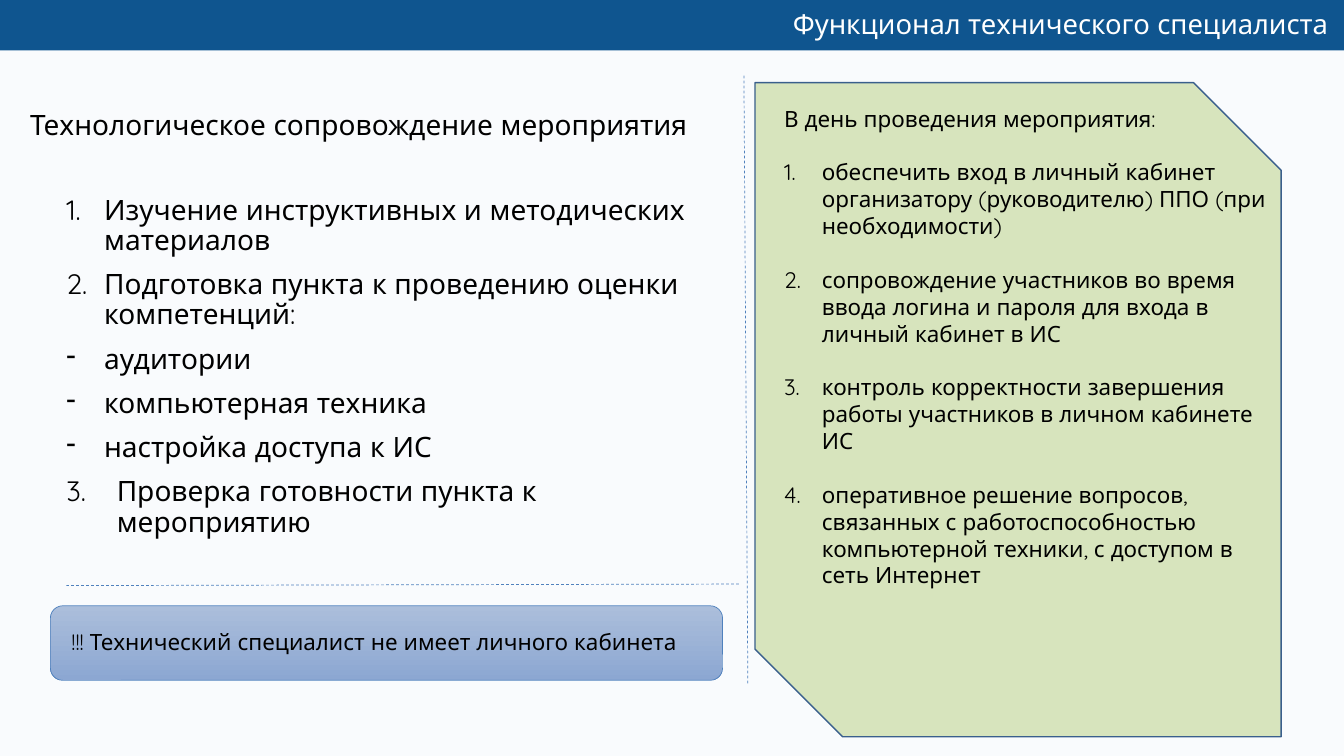
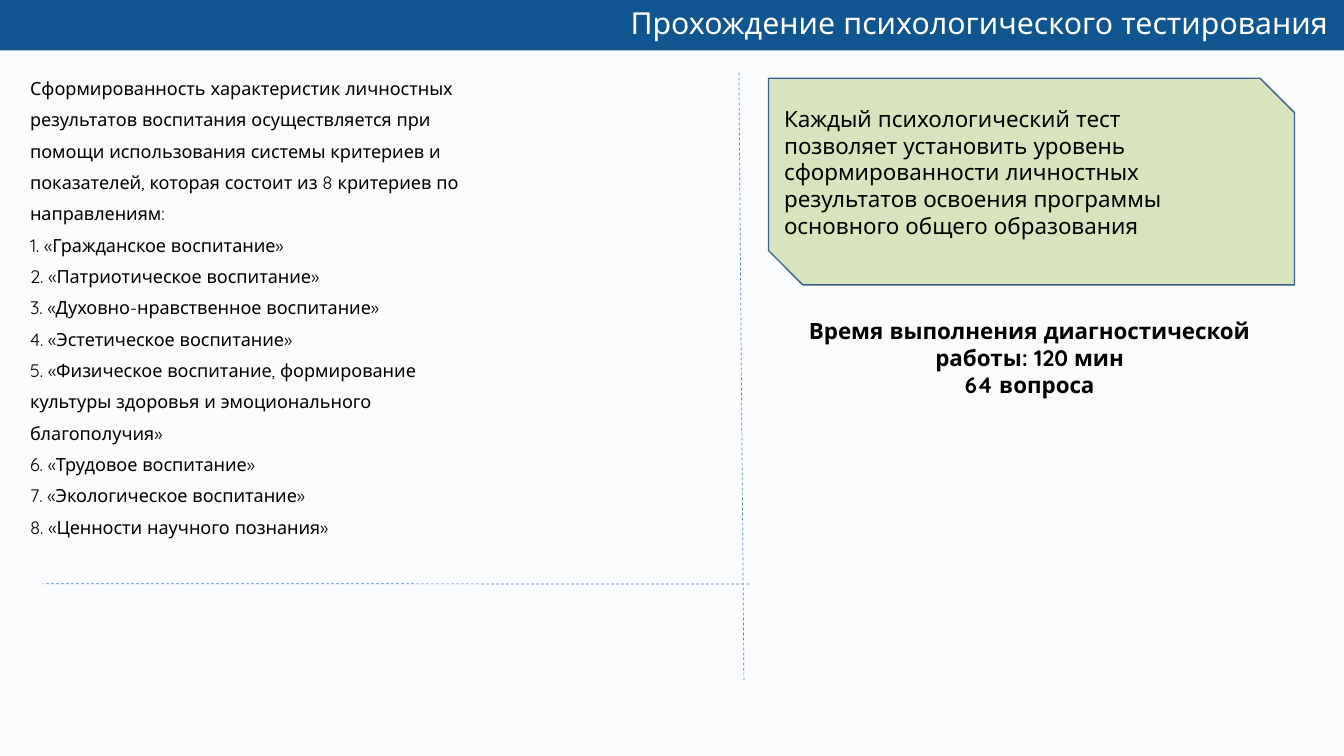
from lxml import etree
from pptx import Presentation
from pptx import util as u
from pptx.dml import color
from pptx.enum import dml, shapes, text
from pptx.oxml import ns

Pt = u.Pt
FONT = "Quicksand"
COLORS = {
    "paper": "F9FBFD",
    "band": "0F558F",
    "title": "FFFFFF",
    "ink": "000000",
    "card": "D7E4BD",
    "card_edge": "3A5F8C",
    "note_top": "ABBEDB",
    "note_bottom": "8CA7D2",
    "accent": "4F81BD",
}


def rgb(name):
    return color.RGBColor.from_string(COLORS[name])


class Slides:
    def __init__(self):
        self.deck = Presentation()
        self.deck.slide_width, self.deck.slide_height = Pt(960), Pt(540)
        background = self.deck.slide_master.background.fill
        background.solid()
        background.fore_color.rgb = rgb("paper")
        self.page = None

    def start_page(self, title, size):
        self.page = self.deck.slides.add_slide(self.deck.slide_layouts.get_by_name("Title Only"))
        band = self.shape(shapes.MSO_SHAPE.RECTANGLE, (0, 0, 960, 36), "band")
        holder = self.page.shapes.title
        holder.element.addprevious(band.element)
        holder.left, holder.top, holder.width, holder.height = Pt(111.6), Pt(2.9), Pt(844.6), Pt(30.2)
        frame = holder.text_frame
        frame.auto_size = text.MSO_AUTO_SIZE.NONE
        frame.vertical_anchor = text.MSO_ANCHOR.MIDDLE
        para = frame.paragraphs[0]
        para.alignment = text.PP_ALIGN.RIGHT
        para.line_spacing = 0.9
        self.span(para, title, size, "title")

    def shape(self, kind, area, fill=None, edge=None, width=1):
        shape = self.page.shapes.add_shape(kind, *map(Pt, area))
        shape.shadow.inherit = False
        if fill:
            shape.fill.solid()
            shape.fill.fore_color.rgb = rgb(fill)
        if edge:
            shape.line.color.rgb = rgb(edge)
            shape.line.width = Pt(width)
        else:
            shape.line.fill.background()
        return shape

    def card(self, area):
        self.shape(shapes.MSO_SHAPE.SNIP_2_DIAG_RECTANGLE, area, "card", "card_edge")

    def note(self, area, words, size):
        note = self.shape(shapes.MSO_SHAPE.ROUNDED_RECTANGLE, area, edge="accent", width=0.5)
        note.fill.gradient()
        note.fill.gradient_angle = 270
        for stop, name in zip(note.fill.gradient_stops, ("note_top", "note_bottom")):
            stop.color.rgb = rgb(name)
        frame = note.text_frame
        frame.word_wrap = True
        frame.vertical_anchor = text.MSO_ANCHOR.MIDDLE
        frame.margin_left, frame.margin_right = Pt(12.5), Pt(0)
        frame.margin_bottom = Pt(6)
        para = frame.paragraphs[0]
        para.alignment = text.PP_ALIGN.LEFT
        self.span(para, words, size)

    def divider(self, start, end):
        line = self.page.shapes.add_connector(shapes.MSO_CONNECTOR.STRAIGHT, *map(Pt, start + end))
        line.line.color.rgb = rgb("accent")
        line.line.width = Pt(0.5)
        line.line.dash_style = dml.MSO_LINE.DASH
        etree.SubElement(line.element.spPr, ns.qn("a:effectLst"))

    def text_box(self, area, lines, size, spacing=1.0, gap=0, bold=False, align=text.PP_ALIGN.LEFT):
        box = self.page.shapes.add_textbox(*map(Pt, area))
        frame = box.text_frame
        frame.word_wrap = True
        for index, line in enumerate(lines):
            words, mark = line if isinstance(line, tuple) else (line, None)
            para = frame.add_paragraph() if index else frame.paragraphs[0]
            if mark:
                self.bullet(para, **mark)
            para.alignment = align
            para.line_spacing = spacing
            para.space_before = Pt(gap if index else 0)
            self.span(para, words, size, bold=bold)

    def bullet(self, para, char=None, start=1, indent=27):
        props = para._p.get_or_add_pPr()
        props.set("marL", str(Pt(indent)))
        props.set("indent", str(-Pt(indent)))
        if char:
            etree.SubElement(props, ns.qn("a:buChar"), char=char)
            return
        number = etree.SubElement(props, ns.qn("a:buAutoNum"), type="arabicPeriod")
        if start > 1:
            number.set("startAt", str(start))

    def span(self, para, words, size, name="ink", bold=False):
        span = para.add_run()
        span.text = words
        span.font.name = FONT
        span.font.size = Pt(size)
        span.font.bold = bold
        span.font.color.rgb = rgb(name)


NUMBER = {"start": 1}
DASH = {"char": "-"}


def build_duties(slides):
    slides.start_page("Функционал технического специалиста", 19.6)
    slides.card((539.3, 59, 375.8, 467.3))
    slides.note((36, 432.7, 480.2, 53.3), "!!! Технический специалист не имеет личного кабинета", 16)
    slides.text_box((14.4, 73.4, 524.2, 31.7), ["Технологическое сопровождение мероприятия"], 20)
    slides.text_box((40.3, 136.5, 476.6, 265), [
        ("Изучение инструктивных и методических материалов", NUMBER),
        ("Подготовка пункта к проведению оценки компетенций:", NUMBER),
        ("аудитории", DASH),
        ("компьютерная техника", DASH),
        ("настройка доступа к ИС", DASH),
        ("Проверка готовности пункта к мероприятию", {"start": 3, "indent": 36}),
    ], 20, spacing=0.9, gap=10)
    slides.text_box((553, 71.3, 362.2, 375.8), [
        "В день проведения мероприятия:",
        ("обеспечить вход в личный кабинет организатору (руководителю) ППО (при необходимости)", NUMBER),
        ("сопровождение участников во время ввода логина и пароля для входа в личный кабинет в ИС", NUMBER),
        ("контроль корректности завершения работы участников в личном кабинете ИС", NUMBER),
        ("оперативное решение вопросов, связанных с работоспособностью компьютерной техники, "
         "с доступом в сеть Интернет", NUMBER),
    ], 16, gap=19.2)
    slides.divider((531.4, 54), (534.2, 488.9))
    slides.divider((527.8, 417.2), (47.5, 418.3))


def build_testing(slides):
    slides.start_page("Прохождение психологического тестирования", 21.6)
    slides.card((548.9, 55.9, 375.8, 147.6))
    slides.text_box((14.4, 54.7, 496, 340.6), [
        "Сформированность характеристик личностных",
        "результатов воспитания осуществляется при",
        "помощи использования системы критериев и",
        "показателей, которая состоит из 8 критериев по",
        "направлениям:",
        "1. «Гражданское воспитание»",
        "2. «Патриотическое воспитание»",
        "3. «Духовно-нравственное воспитание»",
        "4. «Эстетическое воспитание»",
        "5. «Физическое воспитание, формирование",
        "культуры здоровья и эмоционального",
        "благополучия»",
        "6. «Трудовое воспитание»",
        "7. «Экологическое воспитание»",
        "8. «Ценности научного познания»",
    ], 12.9, spacing=0.8, gap=10)
    slides.text_box((553, 71.3, 328.3, 164.9), [
        "Каждый психологический тест позволяет установить уровень сформированности "
        "личностных результатов освоения программы основного общего образования",
    ], 16)
    slides.text_box((543.6, 223.2, 383.8, 62.6), [
        "Время выполнения диагностической работы: 120 мин",
        "64 вопроса",
    ], 16, bold=True, align=text.PP_ALIGN.CENTER)
    slides.divider((527.8, 51.8), (531.4, 486.7))
    slides.divider((535, 417.2), (31, 416.9))


def main():
    slides = Slides()
    build_duties(slides)
    build_testing(slides)
    slides.deck.save("out.pptx")


if __name__ == "__main__":
    main()
